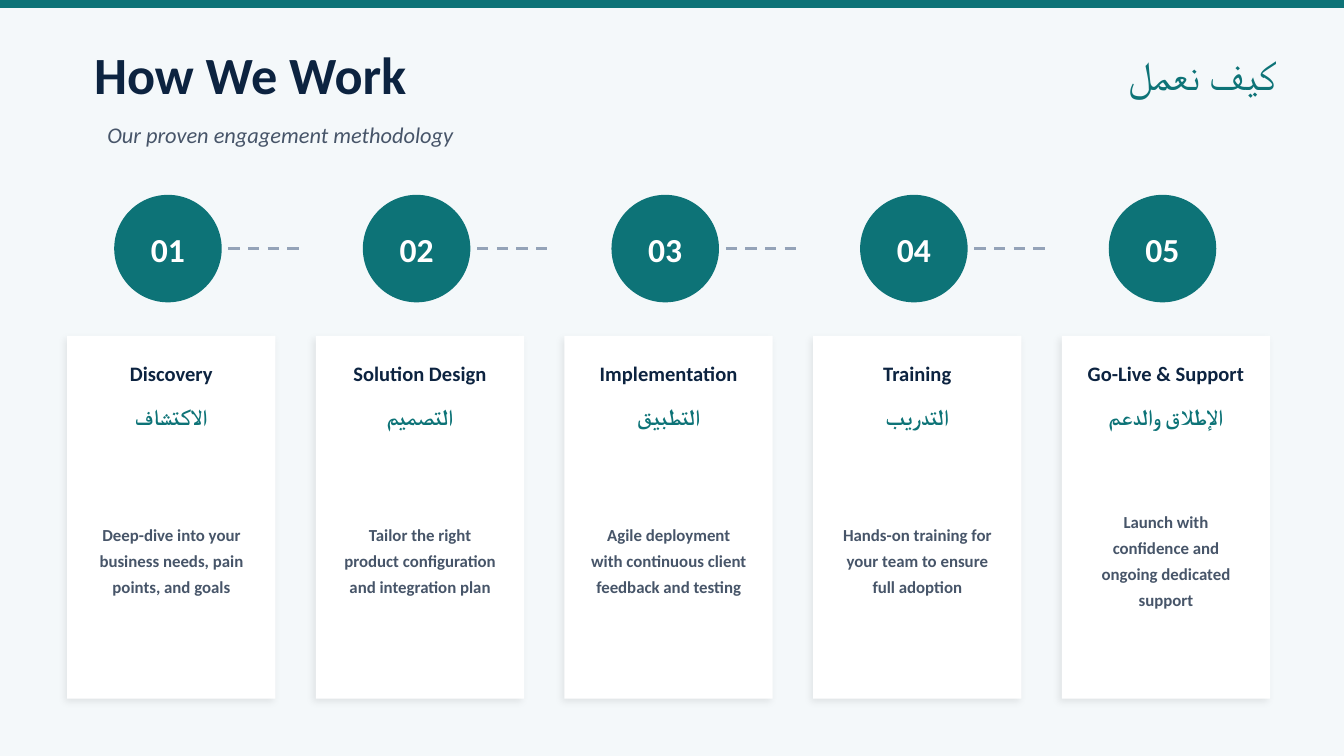
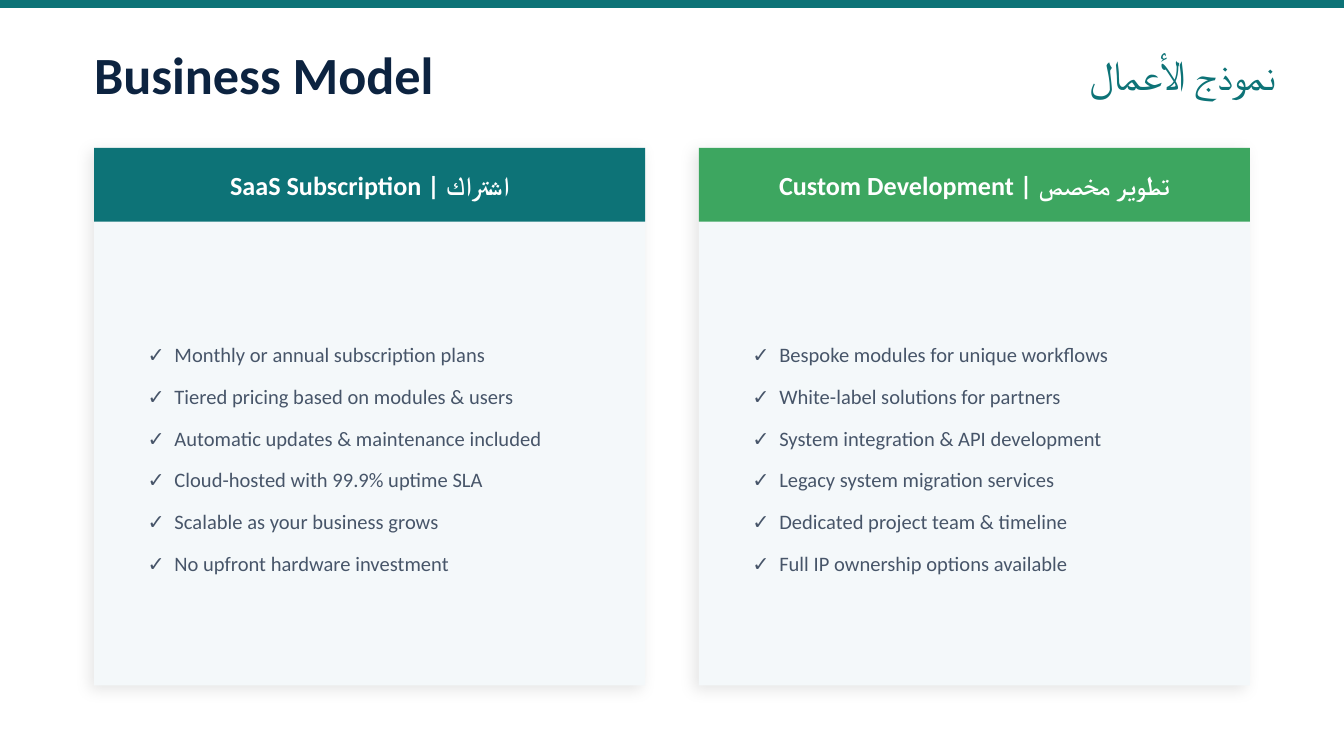
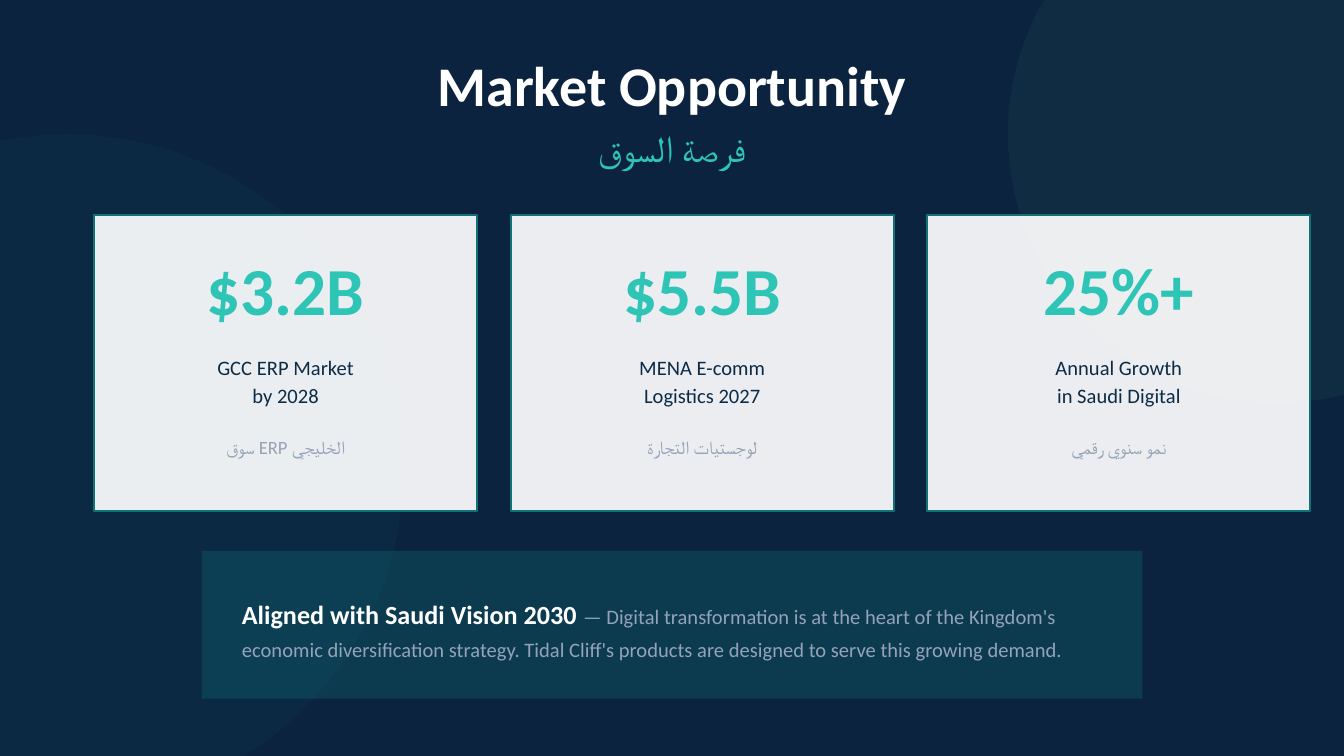
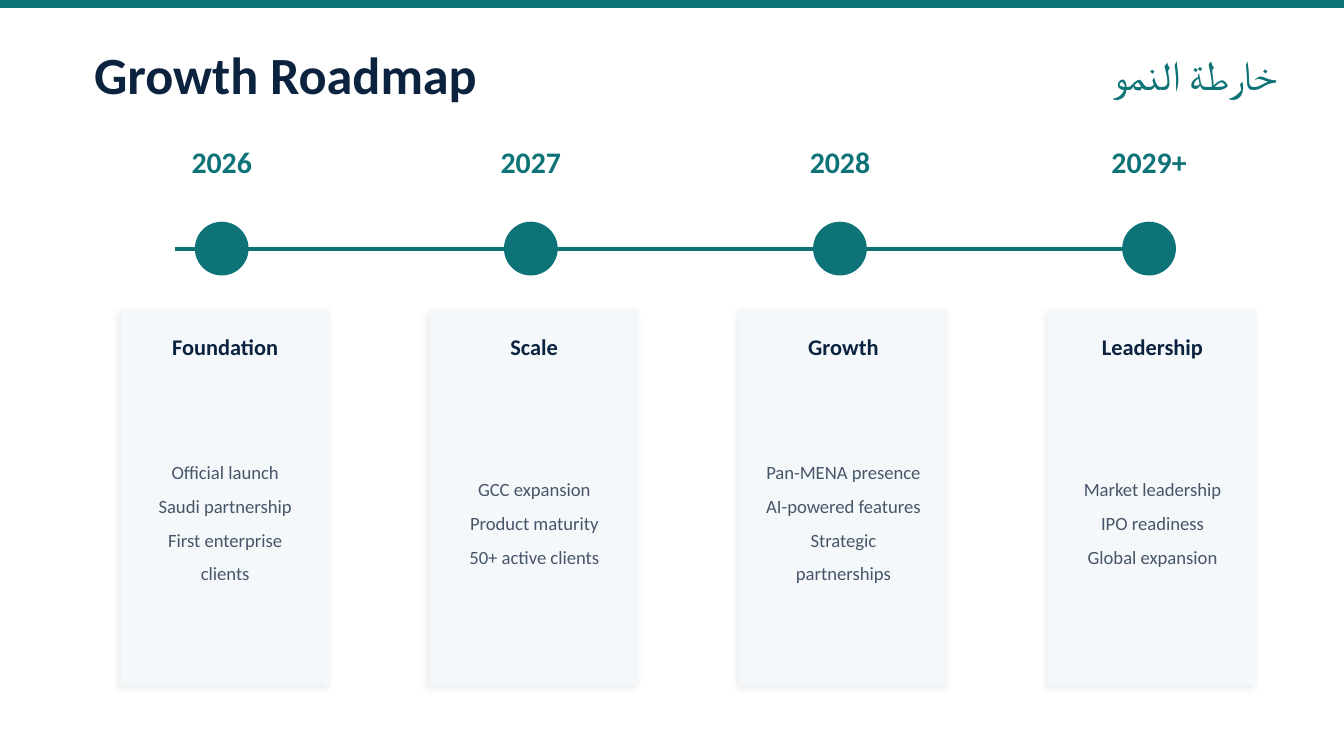
"""Build a four-slide company deck: process, business model, market and roadmap."""
from dataclasses import dataclass

from lxml import etree
from pptx import Presentation
from pptx.dml.color import RGBColor
from pptx.enum.dml import MSO_LINE_DASH_STYLE as Dash
from pptx.enum.shapes import MSO_CONNECTOR as Connector, MSO_SHAPE as Shape
from pptx.enum.text import MSO_ANCHOR as Anchor, MSO_AUTO_SIZE as AutoSize, PP_ALIGN as Align
from pptx.oxml.ns import qn
from pptx.util import Inches, Pt


@dataclass(frozen=True)
class Theme:
    """Colours, fonts and type sizes of the deck."""
    navy: str = "0C2340"
    ink: str = "0C2B45"
    teal: str = "0D7377"
    mint: str = "2EC4B6"
    green: str = "3DA660"
    body: str = "475569"
    muted: str = "94A3B8"
    pale: str = "F4F8FA"
    white: str = "FFFFFF"
    font: str = "Calibri"
    arabic_font: str = "Times New Roman"
    figure: int = 36
    cover: int = 30
    title: int = 28
    arabic_title: int = 22
    arabic_cover: int = 20
    number: int = 18
    year: int = 16
    header: int = 14
    label: int = 12
    text: int = 11
    small: int = 10
    tiny: int = 9


theme = Theme()


def add_box(slide, place, fill=None, kind=Shape.RECTANGLE, alpha=None, shadow=None):
    """Add a filled shape, or a text box when no fill is given."""
    place = [Inches(length) for length in place]
    if fill is None:
        return slide.shapes.add_textbox(*place)
    box = slide.shapes.add_shape(kind, *place)
    box.shadow.inherit = False
    box.line.fill.background()
    box.fill.solid()
    box.fill.fore_color.rgb = RGBColor.from_string(fill)
    if alpha:
        color = box.fill._xPr.find(qn("a:solidFill"))[0]
        etree.SubElement(color, qn("a:alpha"), val=str(alpha * 1000))
    if shadow:
        opacity, blur, distance = shadow
        effects = box._element.spPr.find(qn("a:effectLst"))
        outer = etree.SubElement(effects, qn("a:outerShdw"), blurRad=str(Pt(blur)),
                                 dist=str(Pt(distance)), dir=str(135 * 60000),
                                 algn="bl", rotWithShape="0")
        color = etree.SubElement(outer, qn("a:srgbClr"), val="000000")
        etree.SubElement(color, qn("a:alpha"), val=str(opacity * 1000))
    return box


def write(box, lines, size, color, bold=False, italic=False, align=Align.CENTER,
          spacing=None, font=theme.font, inset=0.1, hanging=None):
    """Fill a box with one paragraph per line, anchored in the middle."""
    frame = box.text_frame
    frame.word_wrap = True
    frame.auto_size = AutoSize.NONE
    frame.vertical_anchor = Anchor.MIDDLE
    frame.margin_left = frame.margin_right = Inches(inset)
    frame.text = "\n".join(lines)
    for para in frame.paragraphs:
        para.alignment = align
        if hanging:
            props = para._p.get_or_add_pPr()
            props.set("marL", str(Inches(hanging)))
            props.set("indent", str(-Inches(hanging)))
            tabs = etree.SubElement(props, qn("a:tabLst"))
            etree.SubElement(tabs, qn("a:tab"), pos=str(Inches(hanging)), algn="l")
        if spacing:
            para.line_spacing = spacing
        para.font.name = font
        para.font.size = Pt(size)
        para.font.bold = bold
        para.font.italic = italic
        para.font.color.rgb = RGBColor.from_string(color)
        for script in ("a:ea", "a:cs"):
            etree.SubElement(para.font._element, qn(script), typeface=font)
    return frame


deck = Presentation()
deck.slide_width = Inches(10)
deck.slide_height = deck.slide_width * 9 // 16
title_only = deck.slide_layouts[5]

pages = []
for title, arabic, background in (
    ("How We Work", "كيف نعمل", theme.pale),
    ("Business Model", "نموذج الأعمال", theme.white),
    ("Market Opportunity", "فرصة السوق", theme.navy),
    ("Growth Roadmap", "خارطة النمو", theme.white),
):
    page = deck.slides.add_slide(title_only)
    pages.append(page)
    page.background.fill.solid()
    page.background.fill.fore_color.rgb = RGBColor.from_string(background)
    heading = page.shapes.title
    if background == theme.navy:
        add_box(page, (-2, 1, 5, 5), theme.teal, Shape.OVAL, alpha=8)
        add_box(page, (7.5, -1, 4, 4), theme.green, Shape.OVAL, alpha=7)
        page.shapes._spTree.append(heading._element)
        place = (0.7, 0.35, 8.6, 0.55)
        write(heading, [title], theme.cover, theme.white, bold=True, inset=0)
        write(add_box(page, (0.7, 0.9, 8.6, 0.4)), [arabic], theme.arabic_cover, theme.mint)
    else:
        add_box(page, (0, 0, 10, 0.06), theme.teal)
        place = (0.7, 0.3, 5, 0.5)
        write(heading, [title], theme.title, theme.navy, bold=True, align=Align.LEFT, inset=0)
        write(add_box(page, (5, 0.3, 4.5, 0.5)), [arabic], theme.arabic_title, theme.teal,
              align=Align.RIGHT, inset=0)
    heading.left, heading.top, heading.width, heading.height = map(Inches, place)

process, model, market, roadmap = pages

step_pitch = 1.85
links = [(process, 1.7 + step_pitch * index, 0.55, theme.muted, 1.5, Dash.DASH)
         for index in range(4)]
links.append((roadmap, 1.3, 7.4, theme.teal, 2, Dash.SOLID))
for page, left, length, color, weight, dash in links:
    link = page.shapes.add_connector(Connector.STRAIGHT, Inches(left), Inches(1.85),
                                     Inches(left + length), Inches(1.85))
    link.line.color.rgb = RGBColor.from_string(color)
    link.line.width = Pt(weight)
    link.line.dash_style = dash
    etree.SubElement(link._element.spPr, qn("a:effectLst"))

card_shadow = (8, 4, 2)

write(add_box(process, (0.7, 0.85, 8.6, 0.3)), ["Our proven engagement methodology"],
      theme.label, theme.body, italic=True, align=Align.LEFT)
steps = (
    ("Discovery", "الاكتشاف", "Deep-dive into your business needs, pain points, and goals"),
    ("Solution Design", "التصميم",
     "Tailor the right product configuration and integration plan"),
    ("Implementation", "التطبيق",
     "Agile deployment with continuous client feedback and testing"),
    ("Training", "التدريب", "Hands-on training for your team to ensure full adoption"),
    ("Go-Live & Support", "الإطلاق والدعم",
     "Launch with confidence and ongoing dedicated support"),
)
for index, (name, arabic, detail) in enumerate(steps):
    left = 0.5 + step_pitch * index
    circle = add_box(process, (left + 0.35, 1.45, 0.8, 0.8), theme.teal, Shape.OVAL)
    write(circle, [f"{index + 1:02}"], theme.number, theme.white, bold=True, inset=0)
    add_box(process, (left, 2.5, 1.55, 2.7), theme.white, shadow=card_shadow)
    write(add_box(process, (left + 0.05, 2.6, 1.45, 0.35)), [name],
          theme.text, theme.navy, bold=True)
    write(add_box(process, (left + 0.05, 2.95, 1.45, 0.3)), [arabic],
          theme.label, theme.teal, bold=True, font=theme.arabic_font)
    write(add_box(process, (left + 0.1, 3.35, 1.35, 1.6)), [detail],
          theme.tiny, theme.body, bold=True, spacing=1.3)

offers = (
    ("SaaS Subscription | اشتراك", theme.teal, (
        "Monthly or annual subscription plans",
        "Tiered pricing based on modules & users",
        "Automatic updates & maintenance included",
        "Cloud-hosted with 99.9% uptime SLA",
        "Scalable as your business grows",
        "No upfront hardware investment",
    )),
    ("Custom Development | تطوير مخصص", theme.green, (
        "Bespoke modules for unique workflows",
        "White-label solutions for partners",
        "System integration & API development",
        "Legacy system migration services",
        "Dedicated project team & timeline",
        "Full IP ownership options available",
    )),
)
for index, (name, color, features) in enumerate(offers):
    left = 0.7 + 4.5 * index
    add_box(model, (left, 1.1, 4.1, 4), theme.pale, shadow=(10, 8, 3))
    header = add_box(model, (left, 1.1, 4.1, 0.55), color)
    write(header, [name], theme.header, theme.white, bold=True)
    write(add_box(model, (left + 0.3, 1.85, 3.5, 3)),
          [f"✓\t{feature}" for feature in features], theme.text, theme.body,
          align=Align.LEFT, spacing=1.7, hanging=0.2)

figures = (
    ("$3.2B", ("GCC ERP Market", "by 2028"), "سوق ERP الخليجي"),
    ("$5.5B", ("MENA E-comm", "Logistics 2027"), "لوجستيات التجارة"),
    ("25%+", ("Annual Growth", "in Saudi Digital"), "نمو سنوي رقمي"),
)
for index, (figure, caption, arabic) in enumerate(figures):
    left = 0.7 + 3.1 * index
    card = add_box(market, (left, 1.6, 2.85, 2.2), theme.white, alpha=92)
    card.line.color.rgb = RGBColor.from_string(theme.teal)
    card.line.width = Pt(1)
    write(add_box(market, (left, 1.75, 2.85, 0.8)), [figure],
          theme.figure, theme.mint, bold=True)
    write(add_box(market, (left + 0.2, 2.55, 2.45, 0.55)), caption,
          theme.text, theme.ink, spacing=1.15)
    write(add_box(market, (left + 0.2, 3.15, 2.45, 0.35)), [arabic], theme.small, theme.muted)

panel = add_box(market, (1.5, 4.1, 7, 1.1), theme.teal, alpha=30)
vision = write(panel, ["Aligned with Saudi Vision 2030 "], theme.header, theme.white,
               bold=True, align=Align.LEFT, spacing=1.3, inset=0.3)
span = vision.paragraphs[0].add_run()
span.text = ("— Digital transformation is at the heart of the Kingdom's economic "
             "diversification strategy. Tidal Cliff's products are designed to serve "
             "this growing demand.")
span.font.size = Pt(theme.text)
span.font.bold = False
span.font.color.rgb = RGBColor.from_string(theme.muted)

phases = (
    ("2026", "Foundation",
     ("Official launch", "Saudi partnership", "First enterprise clients")),
    ("2027", "Scale", ("GCC expansion", "Product maturity", "50+ active clients")),
    ("2028", "Growth",
     ("Pan-MENA presence", "AI-powered features", "Strategic partnerships")),
    ("2029+", "Leadership", ("Market leadership", "IPO readiness", "Global expansion")),
)
for index, (year, name, goals) in enumerate(phases):
    left = 0.9 + 2.3 * index
    add_box(roadmap, (left + 0.55, 1.65, 0.4, 0.4), theme.teal, Shape.OVAL)
    write(add_box(roadmap, (left + 0.1, 1, 1.3, 0.4)), [year],
          theme.year, theme.teal, bold=True)
    add_box(roadmap, (left, 2.3, 1.55, 2.8), theme.pale, shadow=card_shadow)
    write(add_box(roadmap, (left + 0.05, 2.4, 1.45, 0.35)), [name],
          theme.label, theme.navy, bold=True)
    write(add_box(roadmap, (left + 0.1, 2.85, 1.35, 2)), goals,
          theme.small, theme.body, spacing=1.5)

deck.save("out.pptx")
